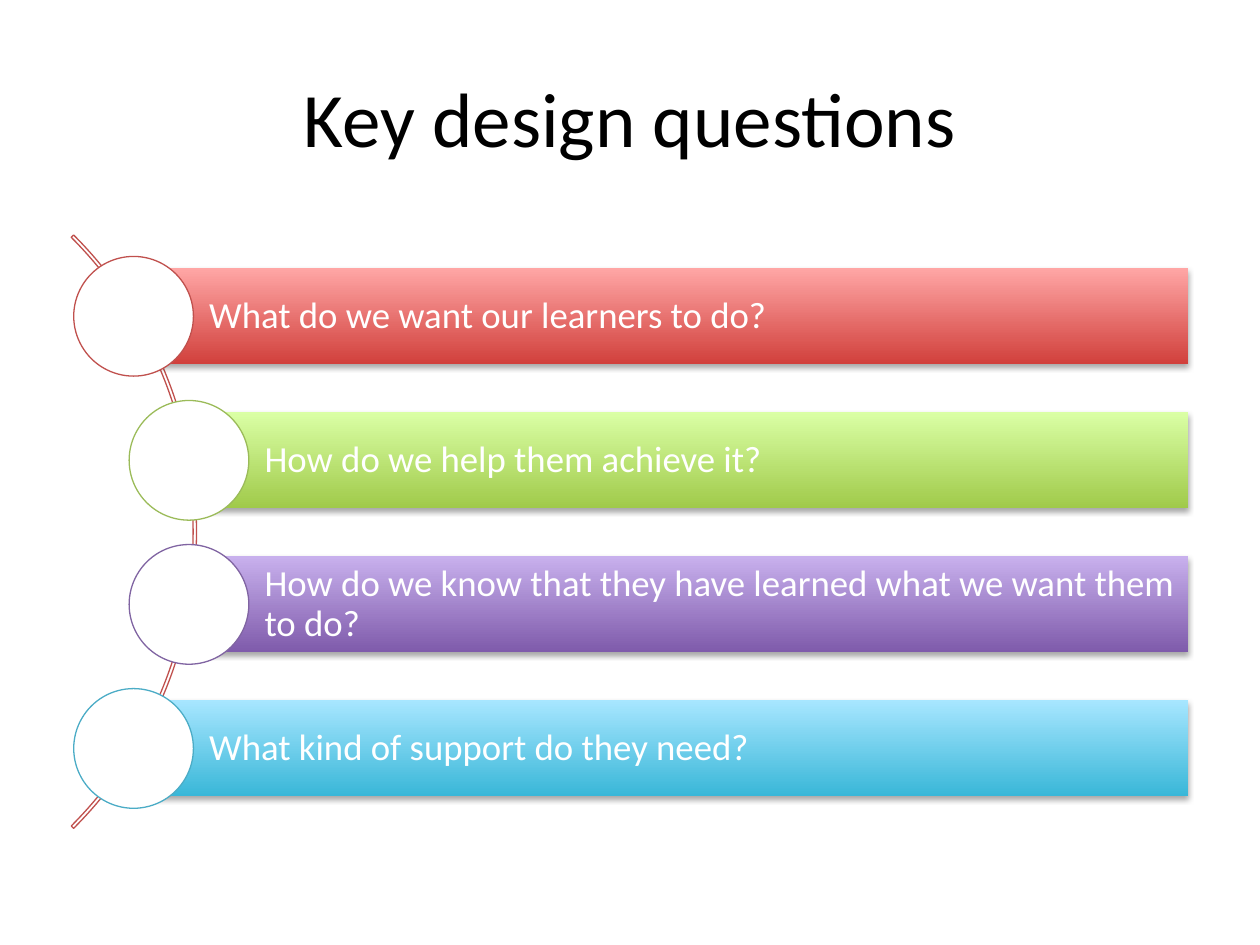
from lxml import etree
from pptx import Presentation, util as u
from pptx.dml.color import RGBColor
from pptx.enum import shapes, text
from pptx.oxml.ns import qn

COLORS = {
    "black": "000000", "white": "FFFFFF",
    "red": "C0504D", "red_dark": "D1403C", "red_light": "FFA6A5",
    "green": "9BBB59", "green_dark": "A0CA4A", "green_light": "DAFFA5",
    "purple": "8064A2", "purple_dark": "7F5BAB", "purple_light": "C8B0ED",
    "blue": "4BACC6", "blue_dark": "39B7D8", "blue_light": "A7E6FF",
}

# Question, hue and left edge of its bar
QUESTIONS = [
    ("What do we want our learners to do?", "red", 1.06),
    ("How do we help them achieve it?", "green", 1.5),
    ("How do we know that they have learned what we want them to do?", "purple", 1.5),
    ("What kind of support do they need?", "blue", 1.06),
]
BAR_RIGHT, BAR_HEIGHT, CIRCLE = 9.43, 0.76, 0.95
FIRST_TOP, LAST_TOP = 2.13, 5.56
PITCH = (LAST_TOP - FIRST_TOP) / (len(QUESTIONS) - 1)


def rgb(name):
    return RGBColor.from_string(COLORS[name])


def set_all(target, values):
    for name, value in values.items():
        setattr(target, name, value)


def write(shape, words, size, color, frame_format, para_format):
    frame = shape.text_frame
    set_all(frame, {"word_wrap": True,
                    "vertical_anchor": text.MSO_ANCHOR.MIDDLE, **frame_format})
    para = frame.paragraphs[0]
    set_all(para, para_format)
    span = para.add_run()
    span.text = words
    set_all(span.font, {"name": "Calibri", "size": u.Pt(size)})
    span.font.color.rgb = rgb(color)


def add_shape(page, kind, left, top, width, height):
    shape = page.shapes.add_shape(
        kind, *(u.Inches(n) for n in (left, top, width, height)))
    shape.shadow.inherit = False
    return shape


def outline(shape, color):
    shape.line.color.rgb = rgb(color)
    shape.line.width = u.Pt(0.75)


def add_title(page, words):
    box = page.shapes.add_textbox(*(u.Inches(n) for n in (0.5, 0.3, 9, 1.25)))
    write(box, words, 44, "black", {}, {"alignment": text.PP_ALIGN.CENTER})


def add_arc(page):
    arc = add_shape(page, shapes.MSO_SHAPE.BLOCK_ARC, -5.1, 0.89, 6.66, 6.66)
    for index, value in enumerate((189, 27, 0.004)):
        arc.adjustments[index] = value
    arc.fill.background()
    outline(arc, "red")


def drop_shadow(shape):
    effects = shape.element.spPr.find(qn("a:effectLst"))
    shadow = etree.SubElement(
        effects, qn("a:outerShdw"), blurRad=str(u.Pt(3.1)), dist=str(u.Pt(1.8)),
        dir="5400000", rotWithShape="0")
    color = etree.SubElement(shadow, qn("a:srgbClr"), val=COLORS["black"])
    etree.SubElement(color, qn("a:alpha"), val="35000")


def add_bar(page, words, hue, left, top):
    bar = add_shape(page, shapes.MSO_SHAPE.RECTANGLE,
                    left, top, BAR_RIGHT - left, BAR_HEIGHT)
    bar.fill.gradient()
    bar.fill.gradient_angle = 90
    for stop, tone in zip(bar.fill.gradient_stops, ("dark", "light")):
        stop.color.rgb = rgb(f"{hue}_{tone}")
    bar.line.fill.background()
    drop_shadow(bar)
    pad = u.Inches(0.06)
    write(bar, words, 21, "white",
          {"margin_left": u.Inches(0.6), "margin_right": pad,
           "margin_top": pad, "margin_bottom": pad},
          {"alignment": text.PP_ALIGN.LEFT, "line_spacing": 0.9})


def add_circle(page, hue, center_x, center_y):
    circle = add_shape(page, shapes.MSO_SHAPE.OVAL, center_x - CIRCLE / 2,
                       center_y - CIRCLE / 2, CIRCLE, CIRCLE)
    circle.fill.solid()
    circle.fill.fore_color.rgb = rgb("white")
    outline(circle, hue)


def main():
    deck = Presentation()
    set_all(deck, {"slide_width": u.Inches(10), "slide_height": u.Inches(7.5)})
    page = deck.slides.add_slide(deck.slide_layouts[6])

    add_title(page, "Key design questions")

    # Curved list: arc behind, then each bar with a circle on its left edge
    add_arc(page)
    for row, (words, hue, left) in enumerate(QUESTIONS):
        top = FIRST_TOP + row * PITCH
        add_bar(page, words, hue, left, top)
        add_circle(page, hue, left, top + BAR_HEIGHT / 2)

    deck.save("out.pptx")


if __name__ == "__main__":
    main()
